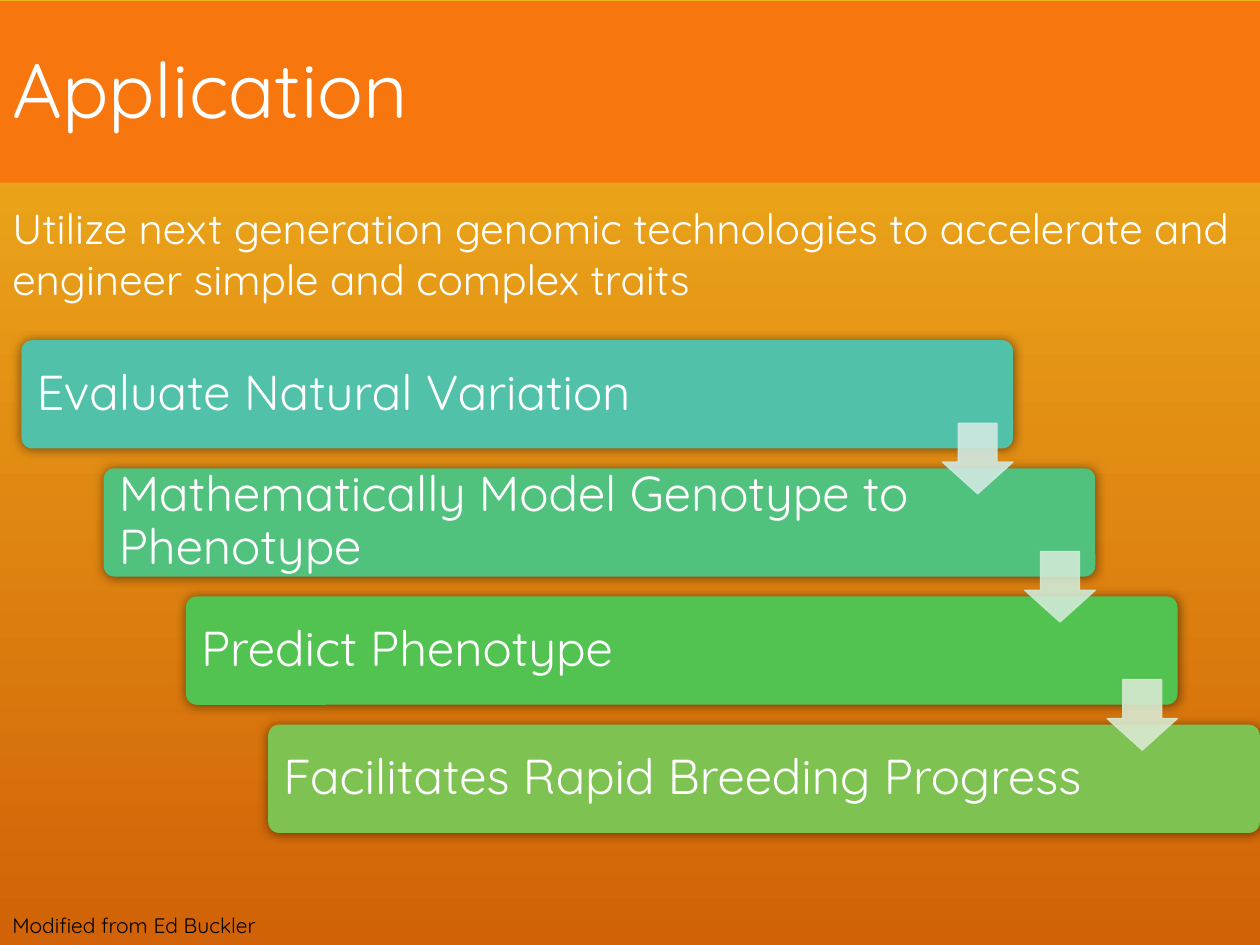
from lxml.etree import SubElement
from pptx import Presentation
from pptx.dml.color import RGBColor
from pptx.enum.shapes import MSO_SHAPE
from pptx.enum.text import MSO_ANCHOR, PP_ALIGN
from pptx.oxml.ns import qn
from pptx.util import Inches, Pt

HUES = {
    "top": "F0B31E", "base": "D16207", "title": "F7760D",
    "white": "FFFFFF", "black": "000000",
}
STEPS = [  # label, bar colour, colour of the arrow to the next step
    ("Evaluate Natural Variation", "51C2A9", "D0E9E2"),
    ("Mathematically Model Genotype to Phenotype", "51C27D", "D0E9D5"),
    ("Predict Phenotype", "52C251", "D8E9D0"),
    ("Facilitates Rapid Breeding Progress", "7EC251", None),
]
LEFT, TOP = 0.17, 2.7
COL, ROW = 0.653, 1.017
WIDE, HIGH = 7.87, 0.86
ARROW = 0.56

deck = Presentation()
deck.slide_width, deck.slide_height = Inches(10), Inches(7.5)
slide = deck.slides.add_slide(deck.slide_layouts[6])
shapes = slide.shapes


def add_block(kind, box, hue):
    block = shapes.add_shape(kind, *map(Inches, box))
    block.fill.solid()
    block.fill.fore_color.rgb = RGBColor.from_string(hue)
    block.line.fill.background()
    block.shadow.inherit = False
    return block


def set_text(shape, words, size, hue="white", wrap=True, space=1.0):
    frame = shape.text_frame
    frame.text = words
    frame.word_wrap = wrap
    para = frame.paragraphs[0]
    para.alignment = PP_ALIGN.LEFT
    para.line_spacing = space
    font = para.runs[0].font
    font.name, font.size = "Quicksand", Pt(size)
    font.color.rgb = RGBColor.from_string(HUES[hue])
    return frame


# Background
back = slide.background.fill
back.gradient()
back.gradient_angle = 270
for stop, name, spot in zip(back.gradient_stops, ("top", "base"), (0, 1)):
    stop.color.rgb = RGBColor.from_string(HUES[name])
    stop.position = spot

# Staircase of steps
for i, (label, hue, _) in enumerate(STEPS):
    x, y = LEFT + i * COL, TOP + i * ROW
    bar = add_block(MSO_SHAPE.ROUNDED_RECTANGLE, (x, y, WIDE, HIGH), hue)
    bar.adjustments[0] = 0.1
    glow = SubElement(bar._element.spPr.find(qn("a:effectLst")), qn("a:outerShdw"),
                      blurRad=str(Pt(6)), dist="0", dir="0", rotWithShape="0")
    tint = SubElement(glow, qn("a:srgbClr"), val=HUES["black"])
    SubElement(tint, qn("a:alpha"), val="50000")

    text = shapes.add_textbox(*map(Inches, (x, y, 6.65, HIGH)))
    frame = set_text(text, label, 28, space=0.9)
    frame.vertical_anchor = MSO_ANCHOR.MIDDLE
    frame.margin_left = frame.margin_right = Inches(0.12)
    frame.margin_top = frame.margin_bottom = Inches(0.12)

# Arrows lie over the bars, flush with each bar's right edge
for i, (_, _, hue) in enumerate(STEPS[:-1]):
    x = LEFT + WIDE - ARROW + i * COL
    y = TOP + 0.66 + i * ROW
    arrow = add_block(MSO_SHAPE.DOWN_ARROW, (x, y, ARROW, ARROW), hue)
    arrow.adjustments[0], arrow.adjustments[1] = 0.55, 0.45
    arrow.line.color.rgb = RGBColor.from_string(hue)
    arrow.line.width = Pt(0.75)
    for tint in arrow._element.spPr.iter(qn("a:srgbClr")):
        SubElement(tint, qn("a:alpha"), val="90000")

# Title, credit and aim
title = add_block(MSO_SHAPE.RECTANGLE, (0, 0.01, 10, 1.44), HUES["title"])
set_text(title, "Application", 44, space=0.95).vertical_anchor = MSO_ANCHOR.MIDDLE

credit = shapes.add_textbox(*map(Inches, (0, 7.19, 2.23, 0.3)))
set_text(credit, "Modified from Ed Buckler", 12, "black", wrap=False)

aim = shapes.add_textbox(*map(Inches, (0, 1.56, 10, 0.91)))
set_text(aim, "Utilize next generation genomic technologies to accelerate "
              "and engineer simple and complex traits", 24)

deck.save("out.pptx")
